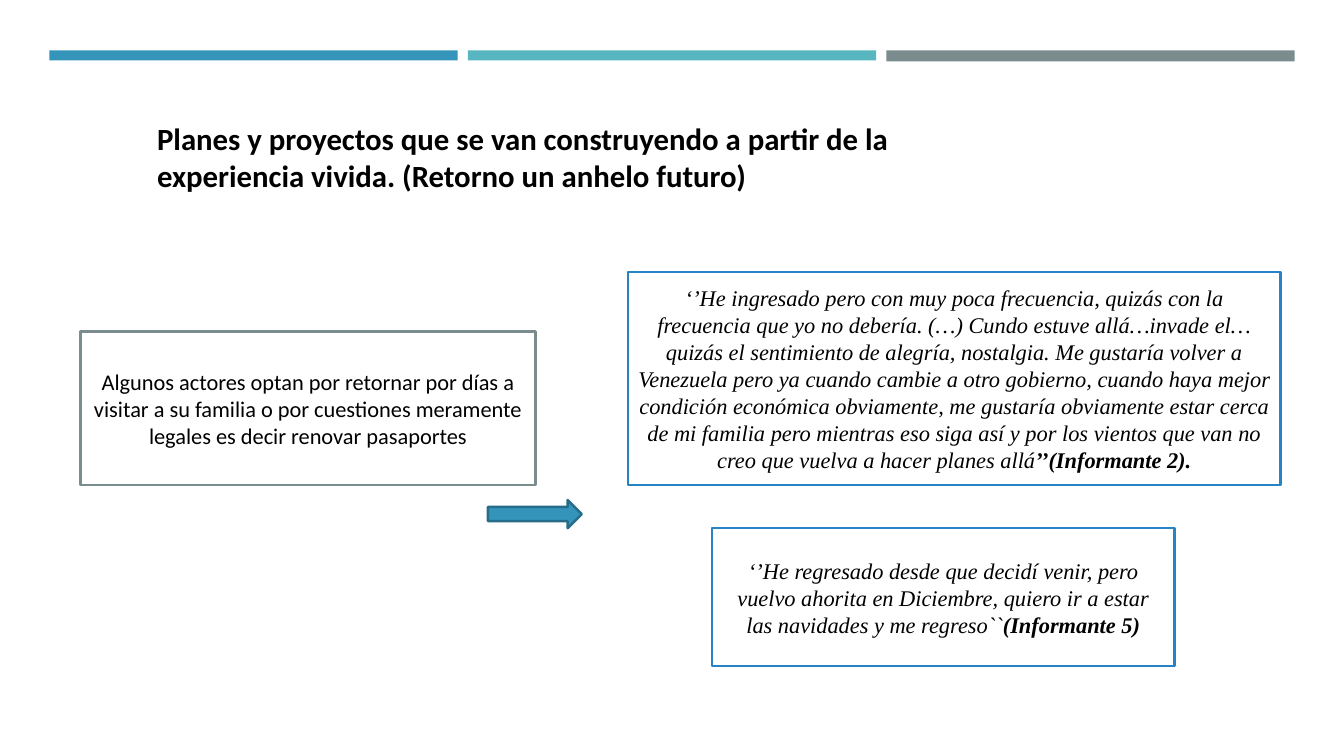
from pptx import Presentation
from pptx.dml.color import RGBColor
from pptx.enum.shapes import MSO_SHAPE as Shape
from pptx.enum.text import MSO_ANCHOR as Anchor, PP_ALIGN as Align
from pptx.util import Inches, Pt

COLORS = {
    "blue": "3494BA",
    "teal": "58B6C0",
    "gray": "7A8C8E",
    "quote": "2683C6",
    "arrow_edge": "266D8A",
    "white": "FFFFFF",
    "black": "000000",
}

presentation = Presentation()
presentation.slide_width = Inches(13.33)
presentation.slide_height = Inches(7.5)
slide = presentation.slides.add_slide(presentation.slide_layouts[6])


def add_block(kind, box, fill, line=None):
    """Add a flat shape; box is left, top, width, height in inches."""
    shape = slide.shapes.add_shape(kind, *map(Inches, box))
    shape.shadow.inherit = False
    shape.fill.solid()
    shape.fill.fore_color.rgb = RGBColor.from_string(COLORS[fill])
    if line:
        shape.line.color.rgb = RGBColor.from_string(COLORS[line])
        shape.line.width = Pt(1.75)
    else:
        shape.line.fill.background()
    return shape


def write(shape, runs, align, anchor, **font_format):
    """Fill a shape with one paragraph of (text, extra font values) runs."""
    frame = shape.text_frame
    frame.word_wrap = True
    frame.vertical_anchor = anchor
    paragraph = frame.paragraphs[0]
    paragraph.alignment = align
    for text, extra in runs:
        run = paragraph.add_run()
        run.text = text
        run.font.color.rgb = RGBColor.from_string(COLORS["black"])
        for name, value in {**font_format, **extra}.items():
            setattr(run.font, name, value)


# Top bars
for column, (color, height) in enumerate([("blue", 0.1), ("teal", 0.1), ("gray", 0.11)]):
    add_block(Shape.RECTANGLE, (0.49 + 4.15 * column, 0.5, 4.05, height), color)

# Statement and quotes
bold = {"bold": True}
statement = {"name": "Calibri", "size": Pt(16)}
quote = {"name": "Times New Roman", "size": Pt(16), "italic": True}
boxes = [
    ((0.8, 3.29, 4.51, 1.52), "gray", statement, [
        ("Algunos actores optan por retornar por días a visitar a su familia o por "
         "cuestiones meramente legales es decir renovar pasaportes", {}),
    ]),
    ((6.23, 2.7, 6.47, 2.11), "quote", quote, [
        ("‘’He ingresado pero con muy poca frecuencia, quizás con la frecuencia que yo "
         "no debería. (…) Cundo estuve allá…invade el… quizás el sentimiento de alegría, "
         "nostalgia. Me gustaría volver a Venezuela pero ya cuando cambie a otro gobierno, "
         "cuando haya mejor condición económica obviamente, me gustaría obviamente estar "
         "cerca de mi familia pero mientras eso siga así y por los vientos que van no creo "
         "que vuelva a hacer planes allá", {}),
        ("’’(Informante 2).", bold),
    ]),
    ((7.06, 5.24, 4.59, 1.37), "quote", quote, [
        ("‘’He regresado desde que decidí venir, pero vuelvo ahorita en Diciembre, quiero "
         "ir a estar las navidades y me regreso``", {}),
        ("(Informante 5)", bold),
    ]),
]
for box, line, font_format, runs in boxes:
    shape = add_block(Shape.RECTANGLE, box, "white", line)
    write(shape, runs, Align.CENTER, Anchor.MIDDLE, **font_format)

add_block(Shape.RIGHT_ARROW, (4.84, 4.96, 0.93, 0.28), "blue", "arrow_edge")

# Heading
heading = slide.shapes.add_textbox(*map(Inches, (1.46, 1.14, 7.61, 0.84)))
heading_text = ("Planes y proyectos que se van construyendo a partir de la experiencia "
                "vivida. (Retorno un anhelo futuro)")
write(heading, [(heading_text, bold)], Align.LEFT, Anchor.TOP, name="Calibri", size=Pt(22))

presentation.save("out.pptx")
